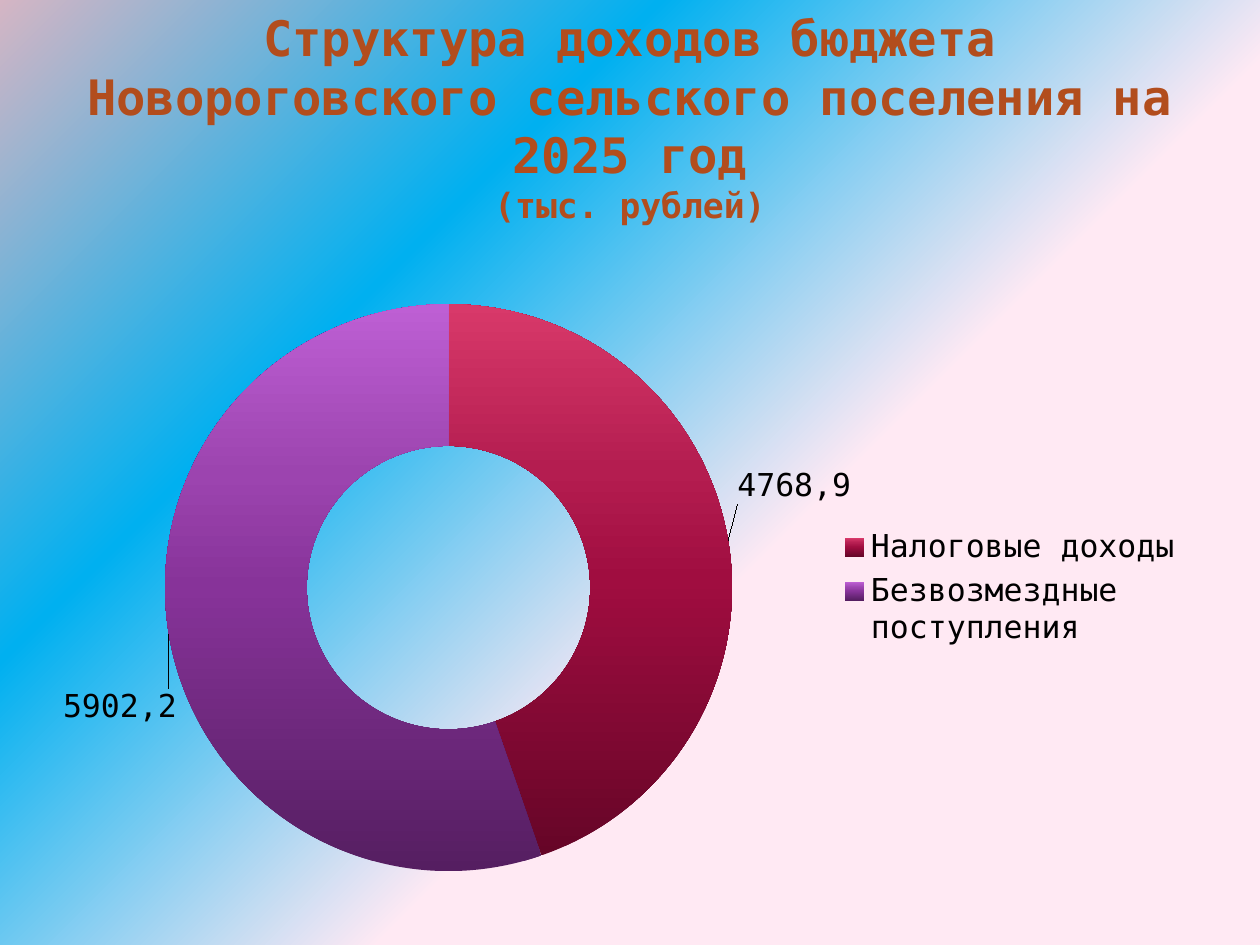
from dataclasses import dataclass

from pptx import Presentation
from pptx import util as u
from pptx.chart import data as cd
from pptx.dml import color
from pptx.enum import chart as ec, text
from pptx.oxml import parse_xml
from pptx.oxml.ns import nsdecls, qn


@dataclass(frozen=True)
class Theme:
    """Colours, font and type sizes of the slide."""
    font: str = "DejaVu Sans Mono"
    title: str = "B24D1D"
    ink: str = "000000"
    title_size: float = 27.9
    unit_size: float = 19.8
    chart_size: float = 18
    backdrop: tuple = ((40, "FFE9F3"), (70, "00B0F0"), (100, "D5B5C4"))
    rings: tuple = (
        ((0, "660527"), (50, "A00D40"), (70, "B41D50"), (100, "D8396A")),
        ((0, "551E61"), (50, "873399"), (70, "9C44AF"), (100, "BE5FD4")),
    )


THEME = Theme()
UPWARD = '<a:lin ang="16200000" scaled="0"/>'
FROM_CORNER = '<a:path path="circle"><a:fillToRect l="100000" t="100000"/></a:path>'
INCOME = (("Налоговые доходы", 4768.9), ("Безвозмездные поступления", 5902.2))
LABEL_SHIFTS = ((0.12, -0.11), (-0.11, 0.14))


def style_font(font, size, rgb, bold=False):
    """Apply the slide font with a size and colour."""
    font.name, font.size, font.bold = THEME.font, u.Pt(size), bold
    font.color.rgb = color.RGBColor.from_string(rgb)


def set_gradient(fill, root, stops, direction):
    """Give a fill a gradient with any number of stops."""
    fill.gradient()
    old = root.find(".//" + qn("a:gradFill"))
    gs = "".join(f'<a:gs pos="{pos * 1000}"><a:srgbClr val="{rgb}"/></a:gs>'
                 for pos, rgb in stops)
    new = parse_xml(f'<a:gradFill {nsdecls("a")} rotWithShape="1">'
                    f'<a:gsLst>{gs}</a:gsLst>{direction}</a:gradFill>')
    old.getparent().replace(old, new)


def make_layout(x, y, w=None, h=None, inner=False):
    """Return a manual chart layout; without a size it is an offset."""
    items = [("layoutTarget", "inner")] if inner else []
    if w is not None:
        items += [("xMode", "edge"), ("yMode", "edge")]
    items += [("x", x), ("y", y)]
    if w is not None:
        items += [("w", w), ("h", h)]
    body = "".join(f'<c:{tag} val="{val}"/>' for tag, val in items)
    return parse_xml(f'<c:layout {nsdecls("c")}><c:manualLayout>{body}'
                     '</c:manualLayout></c:layout>')


def place(parent, layout, after=None):
    """Put a layout in a chart element, replacing any old one."""
    for old in parent.findall(qn("c:layout")):
        parent.remove(old)
    if after is None:
        parent.insert(0, layout)
    else:
        parent.find(qn(after)).addnext(layout)


def add_title(s, lines):
    """Fill the title placeholder with sized lines."""
    sp = s.shapes.title
    sp.left, sp.top, sp.width, sp.height = map(u.Pt, (36, 21.6, 648, 90))
    tf = sp.text_frame
    tf.word_wrap = True
    tf.auto_size = text.MSO_AUTO_SIZE.NONE
    tf.vertical_anchor = text.MSO_ANCHOR.MIDDLE
    p = tf.paragraphs[0]
    p.alignment = text.PP_ALIGN.CENTER
    for i, (line, size) in enumerate(lines):
        if i:
            p.add_line_break()
        r = p.add_run()
        r.text = line
        style_font(r.font, size, THEME.title, bold=True)


def style_slices(series):
    """Colour the slices and pull their labels outside the ring."""
    labels = series.data_labels
    labels.show_value = True
    style_font(labels.font, THEME.chart_size, THEME.ink)
    for i, (_, value) in enumerate(INCOME):
        point = series.points[i]
        fill = point.format.fill
        fill.solid()
        set_gradient(fill, series._element.findall(qn("c:dPt"))[i],
                     THEME.rings[i], UPWARD)
        r = point.data_label.text_frame.paragraphs[0].add_run()
        r.text = f"{value:.1f}".replace(".", ",")
        style_font(r.font, THEME.chart_size, THEME.ink)
    dlbls = series._element.find(qn("c:dLbls"))
    for dlbl, shift in zip(dlbls.findall(qn("c:dLbl")), LABEL_SHIFTS):
        place(dlbl, make_layout(*shift), after="c:idx")
    for old in dlbls.findall(qn("c:showLeaderLines")):
        dlbls.remove(old)
    dlbls.append(parse_xml(f'<c:showLeaderLines {nsdecls("c")} val="1"/>'))


def add_doughnut(s):
    """Add the income doughnut with its legend."""
    data = cd.CategoryChartData()
    data.categories = [name for name, _ in INCOME]
    data.add_series("Series 1", [value for _, value in INCOME])
    chart = s.shapes.add_chart(ec.XL_CHART_TYPE.DOUGHNUT,
                               *map(u.Pt, (36, 163.4, 648, 344.9)), data).chart
    chart.has_title = False
    style_font(chart.font, THEME.chart_size, THEME.ink)
    chart.has_legend = True
    legend = chart.legend
    legend.position = ec.XL_LEGEND_POSITION.RIGHT
    legend.include_in_layout = False
    style_font(legend.font, THEME.chart_size, THEME.ink)
    place(legend._element, make_layout(0.68, 0.39, 0.31, 0.22), after="c:legendPos")
    plot = chart.plots[0]
    plot.vary_by_categories = True
    plot._element.find(qn("c:holeSize")).set("val", "50")
    place(plot._element.getparent(), make_layout(0.09, 0.03, 0.5, 0.94, inner=True))
    style_slices(plot.series[0])


def main():
    """Build the slide and save it."""
    prs = Presentation()
    prs.slide_width, prs.slide_height = u.Pt(720), u.Pt(540)
    s = prs.slides.add_slide(prs.slide_layouts[5])
    set_gradient(s.background.fill, s.element, THEME.backdrop, FROM_CORNER)
    add_doughnut(s)
    add_title(s, (
        ("Структура доходов бюджета Новороговского сельского поселения на 2025 год",
         THEME.title_size),
        ("(тыс. рублей)", THEME.unit_size),
    ))
    prs.save("out.pptx")


if __name__ == "__main__":
    main()
